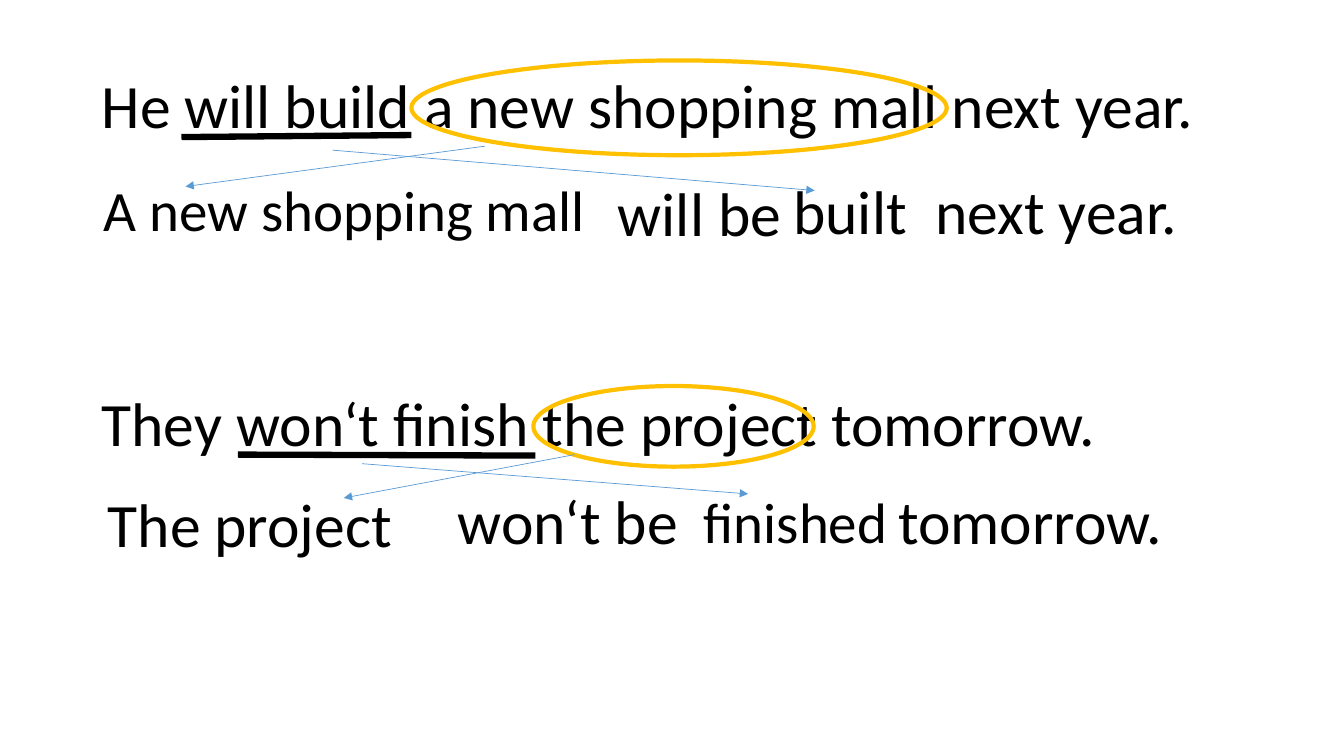
from dataclasses import dataclass

import pptx
import pptx.dml.color
import pptx.enum.shapes
import pptx.enum.text
import pptx.oxml
import pptx.oxml.ns
import pptx.util
from pptx.util import Inches


@dataclass(frozen=True)
class Theme:
    font: str = "Calibri"
    text_size: float = 44
    reduced_size: float = 40.7
    line_spacing: float = 0.9
    ink: str = "000000"
    ring: str = "FFC000"
    arrow: str = "5B9BD5"
    ring_width: float = 3
    underline_width: float = 4.5
    arrow_width: float = 0.5


THEME = Theme()


@dataclass(frozen=True)
class Phrase:
    text: str
    left: float
    top: float
    width: float
    height: float = 1.23
    size: float = THEME.text_size


@dataclass(frozen=True)
class Ring:
    left: float
    top: float
    width: float
    height: float


@dataclass(frozen=True)
class Stroke:
    start: tuple[float, float]
    end: tuple[float, float]


@dataclass(frozen=True)
class Example:
    phrases: tuple[Phrase, ...]
    object_ring: Ring
    verb_underline: Stroke
    object_arrow: Stroke
    verb_arrow: Stroke


EXAMPLES = (
    Example(
        phrases=(
            Phrase("He will build a new shopping mall next year.", 0.91, 0.35, 11.5, 1.45),
            Phrase("A new shopping mall", 0.93, 1.5, 5.02, size=THEME.reduced_size),
            Phrase("built", 7.77, 1.51, 1.37),
            Phrase("will be", 6.03, 1.53, 1.91, 1.24),
            Phrase("next year.", 9.18, 1.51, 3.32),
        ),
        object_ring=Ring(4.08, 0.6, 5.31, 0.94),
        verb_underline=Stroke((1.8, 1.36), (4.08, 1.34)),
        object_arrow=Stroke((4.81, 1.45), (1.84, 1.85)),
        verb_arrow=Stroke((3.3, 1.49), (8.08, 1.89)),
    ),
    Example(
        phrases=(
            Phrase("They won‘t finish the project tomorrow.", 0.91, 3.51, 11.5, 1.45),
            Phrase("The project", 0.97, 4.62, 3.21),
            Phrase("finished", 6.88, 4.59, 2.08, size=THEME.reduced_size),
            Phrase("won‘t be", 4.44, 4.58, 2.45, 1.24),
            Phrase("tomorrow.", 8.81, 4.59, 3.32),
        ),
        object_ring=Ring(5.29, 3.83, 2.78, 0.8),
        verb_underline=Stroke((2.36, 4.51), (5.31, 4.52)),
        object_arrow=Stroke((5.7, 4.51), (3.41, 4.94)),
        verb_arrow=Stroke((3.59, 4.6), (7.42, 4.9)),
    ),
)


def rgb(value: str) -> pptx.dml.color.RGBColor:
    return pptx.dml.color.RGBColor.from_string(value)


def draw_phrase(page: pptx.slide.Slide, phrase: Phrase) -> None:
    box = page.shapes.add_textbox(
        Inches(phrase.left), Inches(phrase.top), Inches(phrase.width), Inches(phrase.height)
    )
    frame = box.text_frame
    frame.text = phrase.text
    frame.word_wrap = True
    frame.vertical_anchor = pptx.enum.text.MSO_ANCHOR.MIDDLE
    para = frame.paragraphs[0]
    para.line_spacing = THEME.line_spacing
    span = para.runs[0]
    span.font.name = THEME.font
    span.font.size = pptx.util.Pt(phrase.size)
    span.font.color.rgb = rgb(THEME.ink)


def draw_ring(page: pptx.slide.Slide, ring: Ring) -> None:
    oval = page.shapes.add_shape(
        pptx.enum.shapes.MSO_SHAPE.OVAL,
        Inches(ring.left), Inches(ring.top), Inches(ring.width), Inches(ring.height),
    )
    oval.shadow.inherit = False
    oval.fill.background()
    oval.line.color.rgb = rgb(THEME.ring)
    oval.line.width = pptx.util.Pt(THEME.ring_width)


def draw_stroke(
    page: pptx.slide.Slide, stroke: Stroke, color: str, width: float, arrowhead: bool = False
) -> None:
    connector = page.shapes.add_connector(
        pptx.enum.shapes.MSO_CONNECTOR.STRAIGHT,
        *(Inches(value) for value in stroke.start + stroke.end),
    )
    connector.line.color.rgb = rgb(color)
    connector.line.width = pptx.util.Pt(width)
    properties = connector.element.spPr
    if arrowhead:
        outline = properties.find(pptx.oxml.ns.qn("a:ln"))
        tail = pptx.oxml.parse_xml(f'<a:tailEnd {pptx.oxml.ns.nsdecls("a")} type="triangle"/>')
        outline.append(tail)
    properties.append(pptx.oxml.parse_xml(f'<a:effectLst {pptx.oxml.ns.nsdecls("a")}/>'))


def draw_example(page: pptx.slide.Slide, example: Example) -> None:
    for phrase in example.phrases:
        draw_phrase(page, phrase)
    draw_ring(page, example.object_ring)
    draw_stroke(page, example.object_arrow, THEME.arrow, THEME.arrow_width, arrowhead=True)
    draw_stroke(page, example.verb_underline, THEME.ink, THEME.underline_width)
    draw_stroke(page, example.verb_arrow, THEME.arrow, THEME.arrow_width, arrowhead=True)


def main() -> None:
    deck = pptx.Presentation()
    deck.slide_width = Inches(13.33)
    deck.slide_height = Inches(7.5)
    page = deck.slides.add_slide(deck.slide_layouts[6])
    for example in EXAMPLES:
        draw_example(page, example)
    deck.save("out.pptx")


if __name__ == "__main__":
    main()
